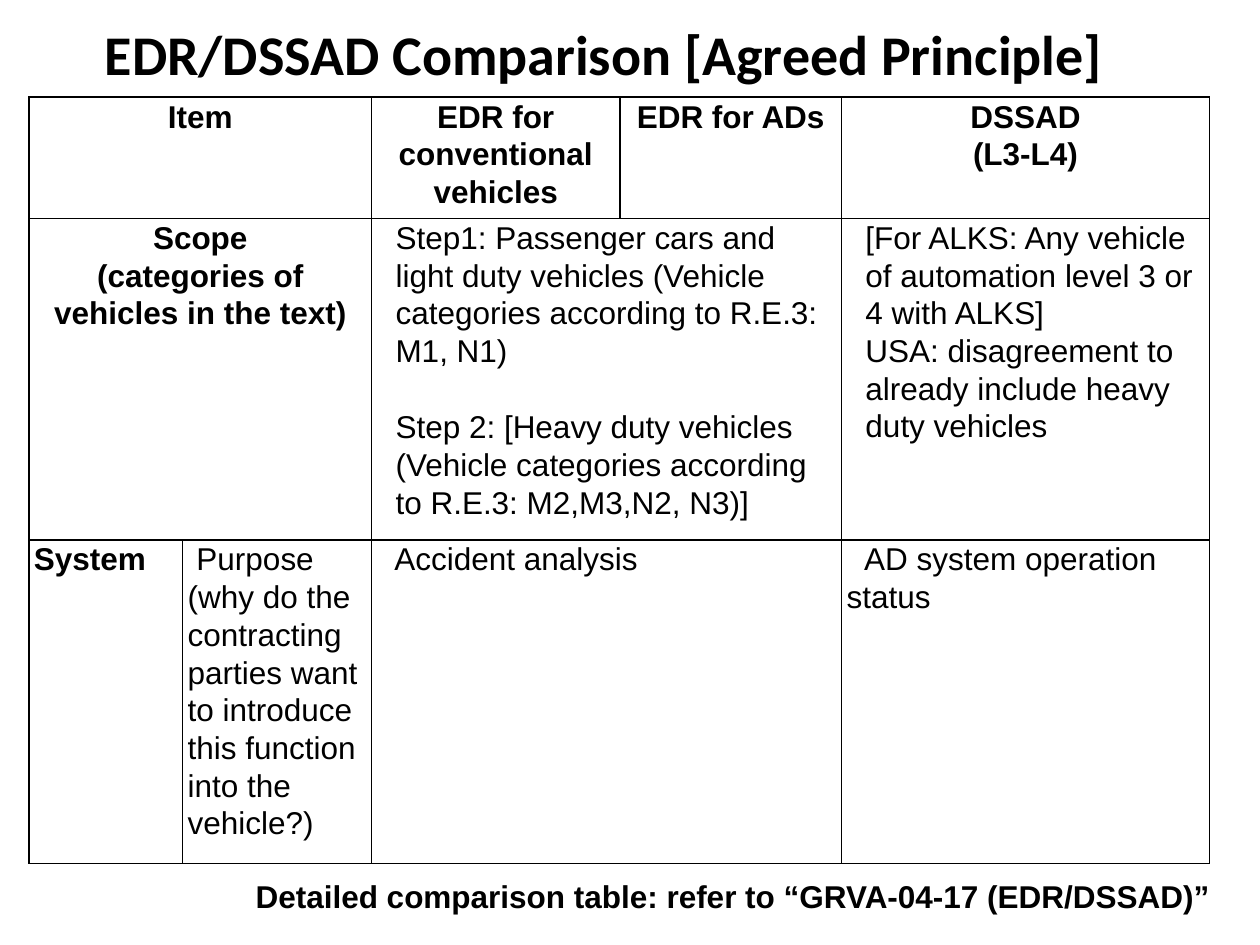
from dataclasses import dataclass

from lxml import etree
from pptx import Presentation
from pptx.dml.color import RGBColor
from pptx.enum.text import MSO_ANCHOR, PP_ALIGN
from pptx.oxml.ns import qn
from pptx.util import Inches, Pt


@dataclass(frozen=True)
class Theme:
    ink: str = "000000"
    title_font: str = "Calibri"
    body_font: str = "Arial"
    title_size: int = 32
    body_size: int = 18
    border_width: int = 1
    line_spacing: float = 1.07
    step_gap: int = 22


theme = Theme()


def add_text(paragraph, text, font_name, size, bold):
    run = paragraph.add_run()
    run.text = text
    run.font.name = font_name
    run.font.size = Pt(size)
    run.font.bold = bold
    run.font.color.rgb = RGBColor.from_string(theme.ink)


def add_borders(cell):
    properties = cell._tc.get_or_add_tcPr()
    for side in ("lnL", "lnR", "lnT", "lnB"):
        line = etree.SubElement(properties, qn(f"a:{side}"), w=str(Pt(theme.border_width)))
        fill = etree.SubElement(line, qn("a:solidFill"))
        etree.SubElement(fill, qn("a:srgbClr"), val=theme.ink)


presentation = Presentation()
presentation.slide_width = Inches(10)
presentation.slide_height = Inches(7.5)
slide = presentation.slides.add_slide(presentation.slide_layouts[6])

# Title
title = slide.shapes.add_textbox(Inches(0.23), Inches(0.18), Inches(9.13), Inches(0.48))
title.text_frame.word_wrap = True
title.text_frame.vertical_anchor = MSO_ANCHOR.MIDDLE
paragraph = title.text_frame.paragraphs[0]
paragraph.alignment = PP_ALIGN.CENTER
add_text(paragraph, "EDR/DSSAD Comparison [Agreed Principle]", theme.title_font, theme.title_size, True)

# Comparison table
column_widths = [1.22, 1.5, 1.97, 1.76, 2.92]
row_heights = [0.9, 2.39, 2.4]
table = slide.shapes.add_table(
    len(row_heights), len(column_widths),
    Inches(0.23), Inches(0.77), Inches(sum(column_widths)), Inches(sum(row_heights)),
).table
table.first_row = False
table.horz_banding = False
for column, width in zip(table.columns, column_widths):
    column.width = Inches(width)
for row, height in zip(table.rows, row_heights):
    row.height = Inches(height)
for cell in table.iter_cells():
    add_borders(cell)
    cell.fill.background()
    cell.margin_left = cell.margin_right = Inches(0.04)
    cell.margin_top = cell.margin_bottom = 0
for row, first, last in [(0, 0, 1), (1, 0, 1), (1, 2, 3), (2, 2, 3)]:
    table.cell(row, first).merge(table.cell(row, last))

# Row, column, bold, centred, left margin, first-line indent, gap between paragraphs, paragraphs
contents = [
    (0, 0, True, True, 0, 0, 0, ["Item"]),
    (0, 2, True, True, 0, 0, 0, ["EDR for conventional vehicles"]),
    (0, 3, True, True, 0, 0, 0, ["EDR for ADs"]),
    (0, 4, True, True, 0, 0, 0, ["DSSAD", "(L3-L4)"]),
    (1, 0, True, True, 0, 0, 0, ["Scope", "(categories of vehicles in the text)"]),
    (1, 2, False, False, 0.15, 0, theme.step_gap, [
        "Step1: Passenger cars and light duty vehicles (Vehicle categories according to R.E.3: M1, N1)",
        "Step 2: [Heavy duty vehicles (Vehicle categories according to R.E.3: M2,M3,N2, N3)]",
    ]),
    (1, 4, False, False, 0.15, 0, 0, [
        "[For ALKS: Any vehicle of automation level 3 or 4 with ALKS]",
        "USA: disagreement to already include heavy duty vehicles",
    ]),
    (2, 0, True, False, 0, 0, 0, ["System"]),
    (2, 1, False, False, 0, 0.07, 0, [
        "Purpose (why do the contracting parties want to introduce this function into the vehicle?)",
    ]),
    (2, 2, False, False, 0, 0.14, 0, ["Accident analysis"]),
    (2, 4, False, False, 0, 0.14, 0, ["AD system operation status"]),
]
for row, column, bold, centred, margin, indent, gap, texts in contents:
    text_frame = table.cell(row, column).text_frame
    for index, text in enumerate(texts):
        paragraph = text_frame.add_paragraph() if index else text_frame.paragraphs[0]
        paragraph.alignment = PP_ALIGN.CENTER if centred else PP_ALIGN.LEFT
        paragraph.line_spacing = theme.line_spacing
        if index and gap:
            paragraph.space_before = Pt(gap)
        properties = paragraph._p.get_or_add_pPr()
        properties.set("marL", str(Inches(margin)))
        properties.set("indent", str(Inches(indent)))
        add_text(paragraph, text, theme.body_font, theme.body_size, bold)

# Reference line
reference = slide.shapes.add_textbox(Inches(1.93), Inches(6.91), Inches(7.91), Inches(0.4))
reference.text_frame.word_wrap = True
add_text(
    reference.text_frame.paragraphs[0],
    "Detailed comparison table: refer to “GRVA-04-17 (EDR/DSSAD)”",
    theme.body_font, theme.body_size, True,
)

presentation.save("out.pptx")
